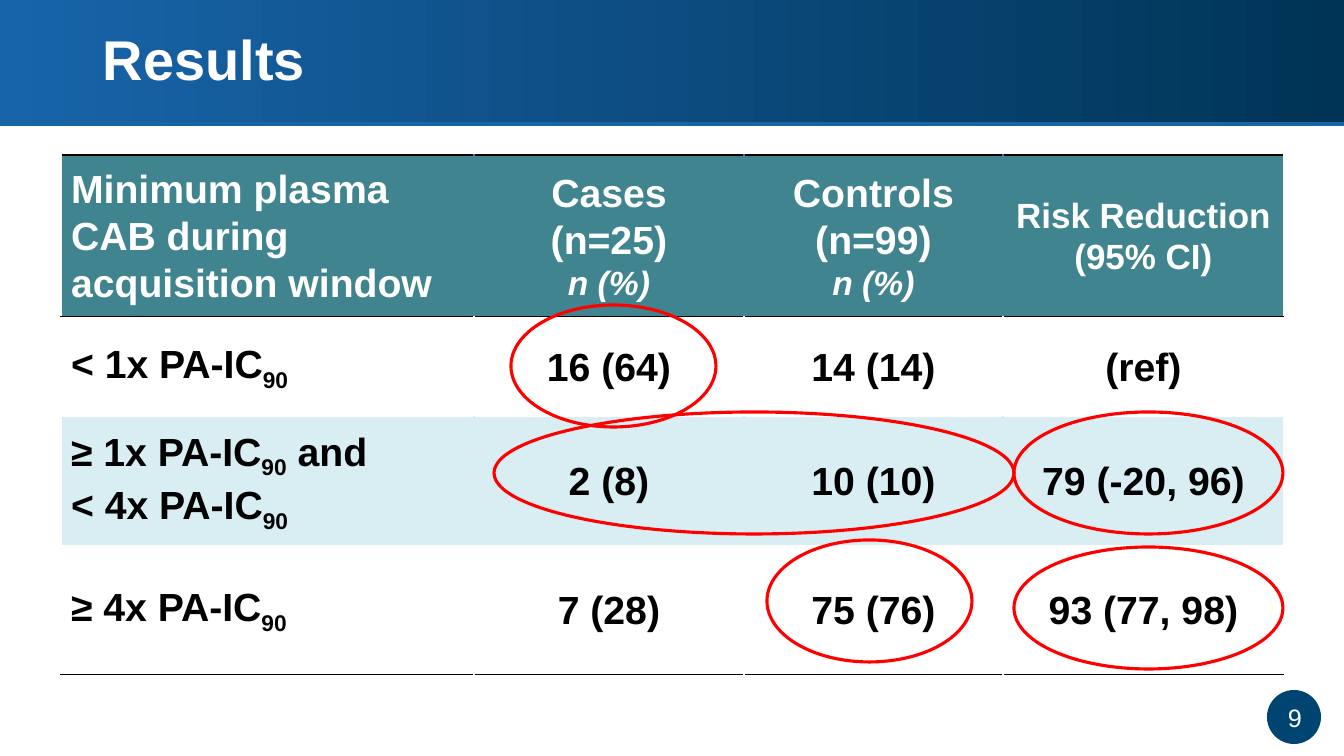
from dataclasses import dataclass

from lxml import etree
from pptx import Presentation
from pptx.dml.color import RGBColor
from pptx.enum.shapes import MSO_CONNECTOR, MSO_SHAPE
from pptx.enum.text import MSO_ANCHOR, PP_ALIGN
from pptx.oxml.ns import qn
from pptx.util import Emu, Pt

LEFT, CENTER = PP_ALIGN.LEFT, PP_ALIGN.CENTER
MIDDLE = MSO_ANCHOR.MIDDLE
RECT, OVAL = MSO_SHAPE.RECTANGLE, MSO_SHAPE.OVAL
STRAIGHT = MSO_CONNECTOR.STRAIGHT
SCALE = 914400 / 100.8


@dataclass(frozen=True)
class Theme:
    font: str = "Arial"
    white: str = "FFFFFF"
    black: str = "000000"
    blue: str = "1864A9"
    navy: str = "003456"
    badge: str = "004572"
    teal: str = "3F848E"
    pale: str = "D8EEF2"
    red: str = "FF0000"
    title: int = 40
    body: int = 28
    risk: int = 25
    unit: int = 24
    page: int = 18


THEME = Theme()
UNIT = "n (%)"
COLS = [413, 270, 259, 281]
ROWS = [148, 100, 129, 129]
# Text between underscores is set as a subscript.
CELLS = [
    [["Minimum plasma CAB during acquisition window"],
     ["Cases", "(n=25)", UNIT],
     ["Controls", "(n=99)", UNIT],
     ["Risk Reduction", "(95% CI)"]],
    [["< 1x PA-IC_90_"], ["16 (64)"], ["14 (14)"], ["(ref)"]],
    [["≥ 1x PA-IC_90_ and", "< 4x PA-IC_90_"],
     ["2 (8)"], ["10 (10)"], ["79 (-20, 96)"]],
    [["≥ 4x PA-IC_90_"], ["7 (28)"], ["75 (76)"], ["93 (77, 98)"]],
]
RINGS = [
    (511, 305, 205),
    (767, 540, 205),
    (1014, 412, 269),
    (1014, 547, 269),
    (494, 412, 520),
]
RING_HIGH = 122


def px(count):
    return Emu(round(count * SCALE))


def rgb(code):
    return RGBColor.from_string(code)


def style(para, size, color, align=LEFT, bold=True, italic=False):
    para.alignment = align
    font = para.font
    font.name, font.size = THEME.font, Pt(size)
    font.bold, font.italic = bold, italic
    font.color.rgb = rgb(color)


def add_runs(para, text):
    """Add runs, lowering each part that stands between underscores."""
    for order, part in enumerate(text.split("_")):
        if part:
            run = para.add_run()
            run.text = part
            if order % 2:
                run._r.get_or_add_rPr().set("baseline", "-25000")


def add_text(slide, box, text, size, **look):
    frame = slide.shapes.add_textbox(*map(px, box)).text_frame
    frame.word_wrap = True
    frame.vertical_anchor = MIDDLE
    para = frame.paragraphs[0]
    para.text = text
    style(para, size, THEME.white, **look)
    return para


def add_shape(slide, kind, box):
    shape = slide.shapes.add_shape(kind, *map(px, box))
    shape.shadow.inherit = False
    shape.line.fill.background()
    return shape


def add_band(slide):
    """Draw the shaded title band and the rule under it."""
    band = add_shape(slide, RECT, (0, 0, 1344, 124))
    band.fill.gradient()
    band.fill.gradient_angle = 0
    for stop, code in zip(band.fill.gradient_stops, (THEME.blue, THEME.navy)):
        stop.color.rgb = rgb(code)
    rule = slide.shapes.add_connector(
        STRAIGHT, px(0), px(124), px(1344), px(124))
    rule.line.color.rgb = rgb(THEME.blue)
    rule.line.width = Pt(3)
    etree.SubElement(rule._element.spPr, qn("a:effectLst"))


def add_badge(slide):
    disc = add_shape(slide, OVAL, (1267, 690, 54, 54))
    disc.fill.solid()
    disc.fill.fore_color.rgb = rgb(THEME.badge)
    add_text(slide, (1252, 697, 86, 40), "9", THEME.page,
             align=CENTER, bold=False)


def add_ring(slide, left, top, wide):
    ring = add_shape(slide, OVAL, (left, top, wide, RING_HIGH))
    ring.fill.background()
    ring.line.color.rgb = rgb(THEME.red)
    ring.line.width = Pt(2.25)


def set_edges(cell, **edges):
    """Give the cell 1 pt borders; edges must come in L, R, T, B order."""
    props = cell._tc.get_or_add_tcPr()
    for side, code in edges.items():
        line = etree.SubElement(props, qn("a:ln" + side), w="12700")
        fill = etree.SubElement(line, qn("a:solidFill"))
        etree.SubElement(fill, qn("a:srgbClr"), val=code)


def fill_cell(cell, row, col, lines):
    last_row, last_col = len(ROWS) - 1, len(COLS) - 1
    back = {0: THEME.teal, 2: THEME.pale}.get(row)
    inner = back or THEME.white
    set_edges(
        cell,
        L=inner if col else THEME.white,
        R=inner if col < last_col else THEME.white,
        T=THEME.black if row < 2 else THEME.white,
        B=THEME.black if row in (0, last_row) else THEME.white)
    if back:
        cell.fill.solid()
        cell.fill.fore_color.rgb = rgb(back)
    else:
        cell.fill.background()
    cell.vertical_anchor = MIDDLE
    if 0 < col < last_col:
        cell.margin_left = cell.margin_right = 0
        cell.margin_top = cell.margin_bottom = 0
    base = THEME.risk if (row, col) == (0, last_col) else THEME.body
    frame = cell.text_frame
    for order, text in enumerate(lines):
        para = frame.add_paragraph() if order else frame.paragraphs[0]
        add_runs(para, text)
        para.line_spacing = 1.07
        unit = text == UNIT
        style(para, THEME.unit if unit else base,
              THEME.black if row else THEME.white,
              align=CENTER if col else LEFT, italic=unit)


def add_grid(slide):
    table = slide.shapes.add_table(
        len(ROWS), len(COLS), px(61), px(155),
        px(sum(COLS)), px(sum(ROWS))).table
    for col, wide in zip(table.columns, COLS):
        col.width = px(wide)
    for row, high in zip(table.rows, ROWS):
        row.height = px(high)
    for row, line in enumerate(CELLS):
        for col, lines in enumerate(line):
            fill_cell(table.cell(row, col), row, col, lines)


def main():
    deck = Presentation()
    deck.slide_width, deck.slide_height = px(1344), px(756)
    slide = deck.slides.add_slide(deck.slide_layouts[6])
    add_band(slide)
    add_badge(slide)
    add_grid(slide)
    title = add_text(slide, (93, 14, 984, 96), "Results", THEME.title)
    title.line_spacing = 0.9
    for ring in RINGS:
        add_ring(slide, *ring)
    deck.save("out.pptx")


if __name__ == "__main__":
    main()
